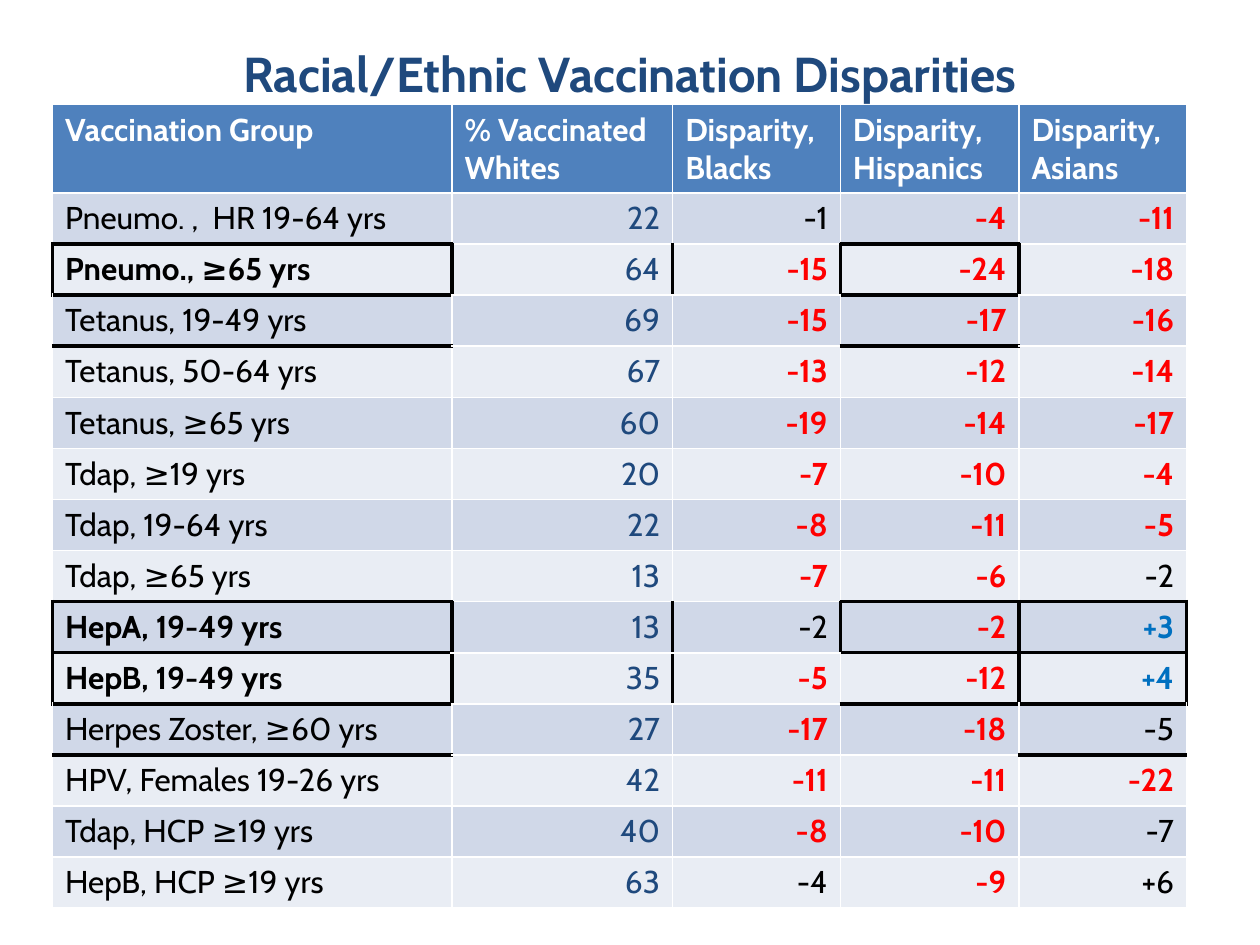
from lxml.etree import fromstring
from pptx import Presentation
from pptx.dml.color import RGBColor
from pptx.enum.text import MSO_ANCHOR, PP_ALIGN
from pptx.util import Cm, Pt

NAVY = RGBColor(0x1F, 0x49, 0x7D)
HEADER_BLUE = RGBColor(0x4F, 0x81, 0xBD)
BAND_DARK = RGBColor(0xD0, 0xD8, 0xE8)
BAND_LIGHT = RGBColor(0xE9, 0xED, 0xF4)
WHITE = RGBColor(0xFF, 0xFF, 0xFF)
BLACK = RGBColor(0x00, 0x00, 0x00)
RED = RGBColor(0xFF, 0x00, 0x00)
BLUE = RGBColor(0x00, 0x70, 0xC0)
FONT = "Cabin"
NAMESPACE = "http://schemas.openxmlformats.org/drawingml/2006/main"

ROWS = [
    ("Vaccination Group", "% Vaccinated\nWhites", "Disparity,\nBlacks", "Disparity,\nHispanics", "Disparity, Asians"),
    ("Pneumo. ,  HR 19-64 yrs", "22", "-1", "-4", "-11"),
    ("Pneumo., ≥65 yrs", "64", "-15", "-24", "-18"),
    ("Tetanus, 19-49 yrs", "69", "-15", "-17", "-16"),
    ("Tetanus, 50-64 yrs", "67", "-13", "-12", "-14"),
    ("Tetanus, ≥65 yrs", "60", "-19", "-14", "-17"),
    ("Tdap, ≥19 yrs", "20", "-7", "-10", "-4"),
    ("Tdap, 19-64 yrs", "22", "-8", "-11", "-5"),
    ("Tdap, ≥65 yrs", "13", "-7", "-6", "-2"),
    ("HepA, 19-49 yrs", "13", "-2", "-2", "+3"),
    ("HepB, 19-49 yrs", "35", "-5", "-12", "+4"),
    ("Herpes Zoster, ≥60 yrs", "27", "-17", "-18", "-5"),
    ("HPV, Females 19-26 yrs", "42", "-11", "-11", "-22"),
    ("Tdap, HCP ≥19 yrs", "40", "-8", "-10", "-7"),
    ("HepB, HCP ≥19 yrs", "63", "-4", "-9", "+6"),
]
COLUMN_WIDTHS = [8.05, 4.45, 3.38, 3.6, 3.38]
BOLD_GROUPS = {2, 9, 10}
PLAIN_DISPARITIES = {(1, 2), (8, 4), (9, 2), (11, 4), (13, 4), (14, 2), (14, 4)}
BLUE_DISPARITIES = {(9, 4), (10, 4)}
BLACK_EDGES = {
    (1, 0): "B", (1, 3): "B",
    (2, 0): "LRTB", (2, 1): "L", (2, 2): "R", (2, 3): "LRTB", (2, 4): "L",
    (3, 0): "T", (3, 3): "T",
    (8, 0): "B", (8, 3): "B", (8, 4): "B",
    (9, 0): "LRTB", (9, 1): "L", (9, 2): "R", (9, 3): "LRTB", (9, 4): "LRTB",
    (10, 0): "LRTB", (10, 1): "L", (10, 3): "RT", (10, 4): "LRTB",
    (11, 0): "T", (11, 4): "T",
}


def style_paragraph(para, size, color, bold, align):
    para.alignment = align
    for span in para.runs:
        span.font.name = FONT
        span.font.size = Pt(size)
        span.font.bold = bold
        span.font.color.rgb = color


def add_black_edges(cell, sides):
    properties = cell._tc.get_or_add_tcPr()
    for position, side in enumerate(sides):
        line = fromstring(
            f'<a:ln{side} xmlns:a="{NAMESPACE}" w="{Pt(2.25)}" cap="flat" cmpd="sng" algn="ctr">'
            f'<a:solidFill><a:srgbClr val="{BLACK}"/></a:solidFill><a:prstDash val="solid"/>'
            f'</a:ln{side}>'
        )
        properties.insert(position, line)


deck = Presentation()
deck.slide_width = Cm(25.4)
deck.slide_height = Cm(19.05)
page = deck.slides.add_slide(deck.slide_layouts[6])

title = page.shapes.add_textbox(Cm(1.27), Cm(0.84), Cm(22.86), Cm(1.35))
title.text_frame.word_wrap = True
title.text_frame.vertical_anchor = MSO_ANCHOR.BOTTOM
title.text_frame.text = "Racial/Ethnic Vaccination Disparities"
title_para = title.text_frame.paragraphs[0]
title_para.line_spacing = Pt(30)
style_paragraph(title_para, 28, NAVY, True, PP_ALIGN.CENTER)

table = page.shapes.add_table(
    len(ROWS), len(COLUMN_WIDTHS), Cm(1.06), Cm(2.11), Cm(22.86), Cm(16.19)
).table
for column, width in zip(table.columns, COLUMN_WIDTHS):
    column.width = Cm(width)

for row_index, values in enumerate(ROWS):
    table.rows[row_index].height = Cm(1.03 if row_index else 1.77)
    for column_index, value in enumerate(values):
        place = (row_index, column_index)
        align = PP_ALIGN.RIGHT if row_index and column_index else PP_ALIGN.LEFT
        if row_index == 0:
            fill, color, bold = HEADER_BLUE, WHITE, True
        else:
            fill = BAND_DARK if row_index % 2 else BAND_LIGHT
            if column_index == 0:
                color, bold = BLACK, row_index in BOLD_GROUPS
            elif column_index == 1:
                color, bold = NAVY, False
            elif place in PLAIN_DISPARITIES:
                color, bold = BLACK, False
            else:
                color, bold = BLUE if place in BLUE_DISPARITIES else RED, True
        cell = table.cell(row_index, column_index)
        cell.fill.solid()
        cell.fill.fore_color.rgb = fill
        cell.text_frame.text = value
        for para in cell.text_frame.paragraphs:
            style_paragraph(para, 18, color, bold, align)
        add_black_edges(cell, BLACK_EDGES.get(place, ""))

deck.save("out.pptx")
